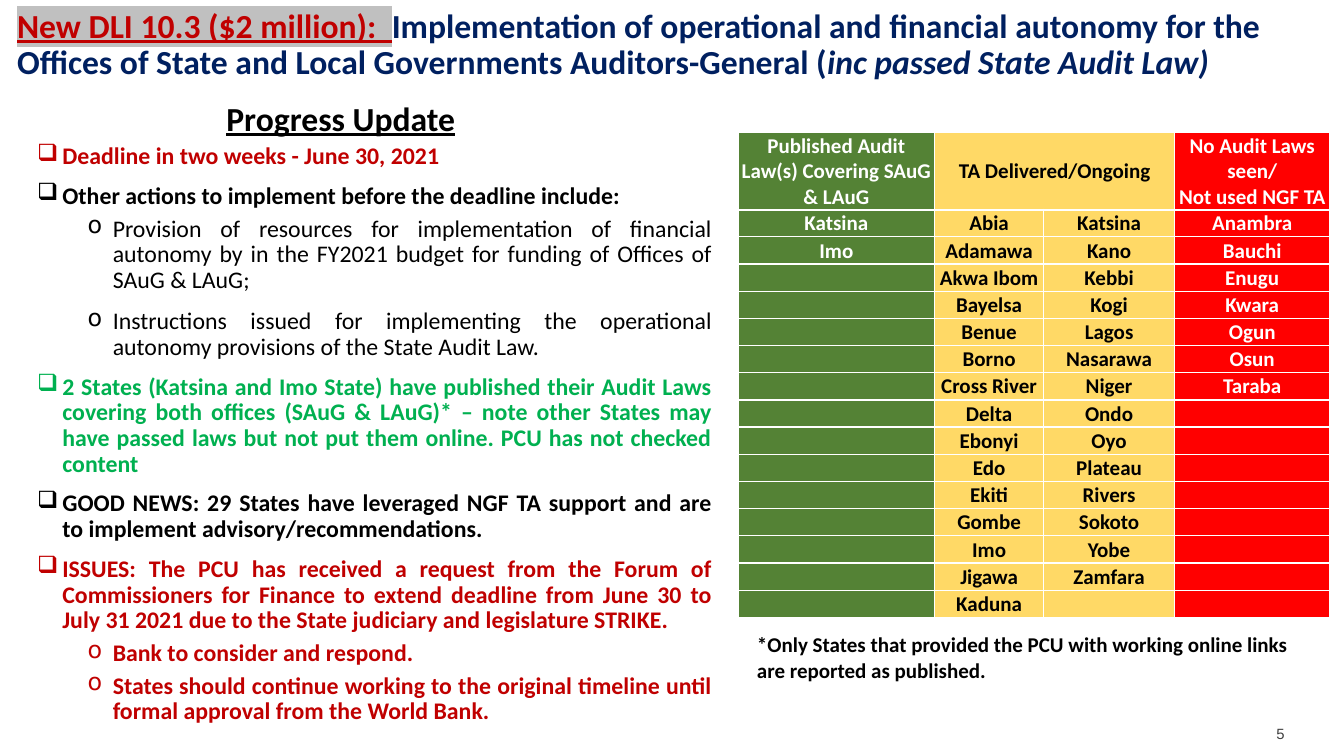
from itertools import zip_longest

from lxml import etree
from pptx import Presentation
from pptx import util as u
from pptx.dml.color import RGBColor
from pptx.enum import text
from pptx.oxml import ns

RED, GREEN, NAVY, BLACK, WHITE = "C00000", "00B050", "002060", "000000", "FFFFFF"
LEAF, GOLD, ALERT = "548235", "FFD966", "FF0000"
LEFT, MID, JUST = text.PP_ALIGN.LEFT, text.PP_ALIGN.CENTER, text.PP_ALIGN.JUSTIFY

POINTS = [
    (0, RED, True, "Deadline in two weeks - June 30, 2021"),
    (0, BLACK, True, "Other actions to implement before the deadline include:"),
    (1, BLACK, False, "Provision of resources for implementation of financial autonomy by in "
                      "the FY2021 budget for funding of Offices of SAuG & LAuG;"),
    (1, BLACK, False, "Instructions issued for implementing the operational autonomy "
                      "provisions of the State Audit Law."),
    (0, GREEN, True, "2 States (Katsina and Imo State) have published their Audit Laws "
                     "covering both offices (SAuG & LAuG)* – note other States may have "
                     "passed laws but not put them online. PCU has not checked content"),
    (0, BLACK, True, "GOOD NEWS: 29 States have leveraged NGF TA support and are to "
                     "implement advisory/recommendations."),
    (0, RED, True, "ISSUES: The PCU has received a request from the Forum of Commissioners "
                   "for Finance to extend deadline from June 30 to July 31 2021 due to the "
                   "State judiciary and legislature STRIKE."),
    (1, RED, True, "Bank to consider and respond."),
    (1, RED, True, "States should continue working to the original timeline until formal "
                   "approval from the World Bank."),
]
HEADS = ["Published Audit Law(s) Covering SAuG & LAuG", "TA Delivered/Ongoing", "",
         "No Audit Laws seen/\nNot used NGF TA"]
STATES = [
    ["Katsina", "Imo"],
    ["Abia", "Adamawa", "Akwa Ibom", "Bayelsa", "Benue", "Borno", "Cross River", "Delta",
     "Ebonyi", "Edo", "Ekiti", "Gombe", "Imo", "Jigawa", "Kaduna"],
    ["Katsina", "Kano", "Kebbi", "Kogi", "Lagos", "Nasarawa", "Niger", "Ondo", "Oyo",
     "Plateau", "Rivers", "Sokoto", "Yobe", "Zamfara"],
    ["Anambra", "Bauchi", "Enugu", "Kwara", "Ogun", "Osun", "Taraba"],
]
LOOKS = [(LEAF, WHITE), (GOLD, BLACK), (GOLD, BLACK), (ALERT, WHITE)]
WIDTHS = [1.95, 1.08, 1.3, 1.54]


def rgb(tone):
    """Turn a hex string into a colour."""
    return RGBColor.from_string(tone)


def node(home, tag, **attrs):
    """Append a drawing element and return it."""
    return etree.SubElement(home, ns.qn("a:" + tag), **attrs)


def write(para, words, size=15, tone=BLACK, bold=True, italic=False, line=False,
          face="Calibri", mark=None):
    """Add one formatted run to a paragraph."""
    run = para.add_run()
    run.text = words
    font = run.font
    font.size, font.name, font.bold = u.Pt(size), face, bold
    font.italic, font.underline = italic, line
    font.color.rgb = rgb(tone)
    if mark:
        glow = etree.Element(ns.qn("a:highlight"))
        node(glow, "srgbClr", val=mark)
        run.font._element.find(ns.qn("a:solidFill")).addnext(glow)


def box(slide, x, y, w, h, pad=(0.1, 0.05)):
    """Add a wrapping text box and return its frame."""
    frame = slide.shapes.add_textbox(*map(u.Inches, (x, y, w, h))).text_frame
    frame.word_wrap = True
    frame.margin_left = frame.margin_right = u.Inches(pad[0])
    frame.margin_top = frame.margin_bottom = u.Inches(pad[1])
    return frame


def bullet(para, level):
    """Give a paragraph its bullet, indent and spacing."""
    para.level = level
    para.line_spacing = 0.9
    para.space_before = u.Pt(5 if level else 10)
    props = para._p.get_or_add_pPr()
    props.set("marL", str(u.Inches(0.75 if level else 0.25)))
    props.set("indent", str(u.Inches(-0.25)))
    node(props, "buChar", char="o" if level else "❑")


def points(slide):
    """Write the list of progress points."""
    frame = box(slide, 0.27, 1.38, 6.89, 5.25)
    for i, (level, tone, bold, words) in enumerate(POINTS):
        para = frame.add_paragraph() if i else frame.paragraphs[0]
        para.alignment = JUST if i else LEFT
        bullet(para, level)
        write(para, words, size=17, tone=tone, bold=bold)
    frame.paragraphs[2].space_after = u.Pt(6)


def edge(cell, head, below):
    """Draw white borders, heavier under the header."""
    props = cell._tc.get_or_add_tcPr()
    for side in "LRTB":
        thick = (side == "B" and head) or (side == "T" and below)
        line = node(props, "ln" + side, w=str(u.Pt(1.5 if thick else 1)))
        node(node(line, "solidFill"), "srgbClr", val=WHITE)


def fill(cell, words, look, row):
    """Format one table cell and write its words."""
    edge(cell, row == 0, row == 1)
    cell.fill.solid()
    cell.fill.fore_color.rgb = rgb(look[0])
    cell.vertical_anchor = text.MSO_ANCHOR.MIDDLE
    cell.margin_left = cell.margin_right = cell.margin_top = u.Inches(0.01)
    cell.margin_bottom = 0
    frame = cell.text_frame
    for i, part in enumerate(words.split("\n")):
        para = frame.add_paragraph() if i else frame.paragraphs[0]
        para.alignment = MID
        if part:
            write(para, part, tone=look[1])
        else:
            node(para._p, "endParaRPr", sz="1500")


def grid(slide):
    """Build the table of states."""
    rows = [HEADS, *zip_longest(*STATES, fillvalue="")]
    place = map(u.Inches, (7.32, 1.31, sum(WIDTHS), 4.82))
    table = slide.shapes.add_table(len(rows), len(WIDTHS), *place).table
    table.first_row = table.horz_banding = False
    for col, wide in zip(table.columns, WIDTHS):
        col.width = u.Inches(wide)
    for r, row in enumerate(rows):
        table.rows[r].height = u.Inches(0.27 if r else 0.77)
        for c, words in enumerate(row):
            fill(table.cell(r, c), words, LOOKS[c], r)
    table.cell(0, 1).merge(table.cell(0, 2))


def title(slide):
    """Write the slide title."""
    para = box(slide, 0.17, 0.09, 13, 0.73, pad=(0, 0)).paragraphs[0]
    para.line_spacing = 0.9
    write(para, "New DLI 10.3 ($2 million):  ", size=24, tone=RED, line=True, mark="C0C0C0")
    write(para, "Implementation of operational and financial autonomy for the Offices of "
                "State and Local Governments Auditors-General (", size=24, tone=NAVY)
    write(para, "inc passed State Audit Law)", size=24, tone=NAVY, italic=True)


def main():
    """Build and save the slide."""
    deck = Presentation()
    deck.slide_width, deck.slide_height = u.Inches(13.33), u.Inches(7.5)
    slide = deck.slides.add_slide(deck.slide_layouts[6])
    points(slide)
    grid(slide)
    title(slide)
    para = box(slide, 1.51, 0.92, 3.74, 0.5).paragraphs[0]
    para.alignment = MID
    write(para, "Progress Update", size=24, line=True)
    para = box(slide, 12.66, 7.16, 0.28, 0.21, pad=(0, 0.03)).paragraphs[0]
    write(para, "5", size=10.6, tone="404040", bold=False, face="Arial")
    para = box(slide, 7.41, 6.22, 5.73, 0.61).paragraphs[0]
    write(para, "*Only States that provided the PCU with working online links are "
                "reported as published.")
    deck.save("out.pptx")


if __name__ == "__main__":
    main()
